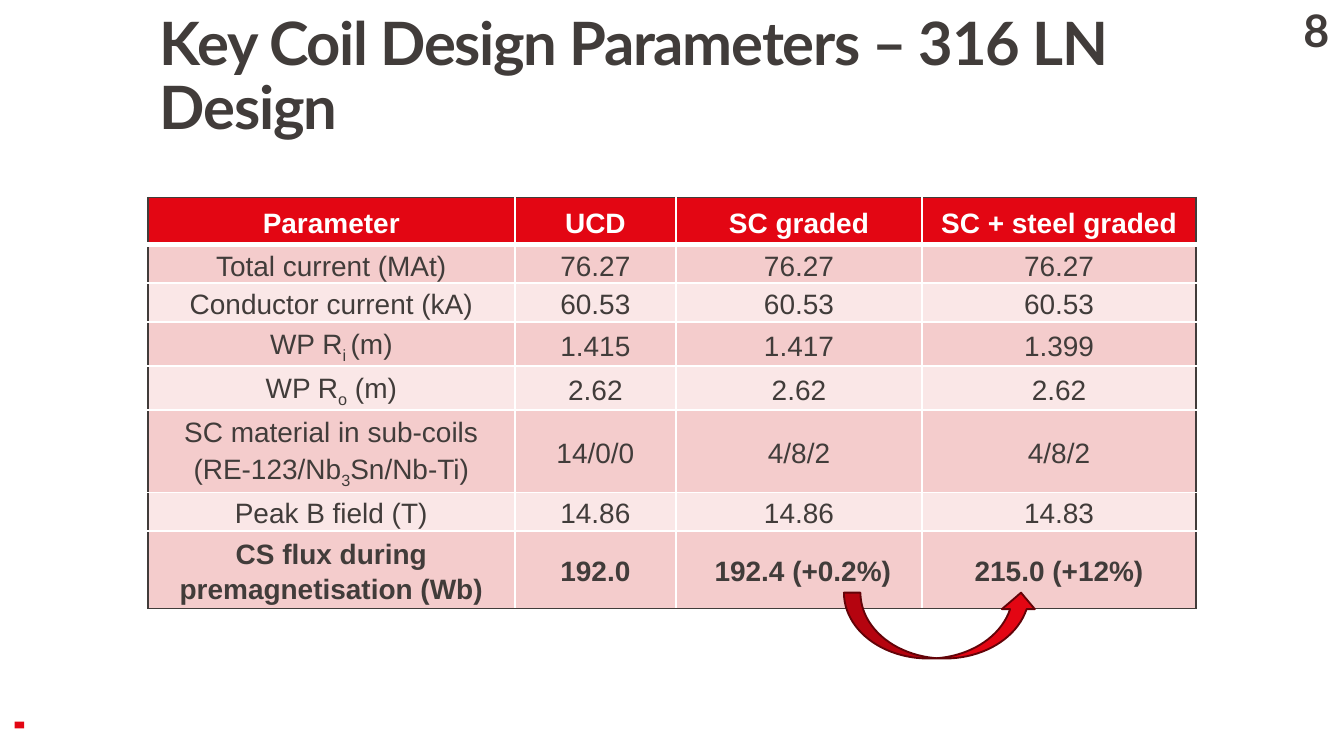
from dataclasses import dataclass

from lxml.etree import SubElement
from pptx import Presentation
from pptx.dml.color import RGBColor as RGB
from pptx.enum.shapes import MSO_SHAPE as Shape
from pptx.enum.text import MSO_ANCHOR as Anchor, MSO_AUTO_SIZE as AutoSize, PP_ALIGN as Align
from pptx.oxml.ns import qn
from pptx.util import Inches, Pt


@dataclass(frozen=True)
class Theme:
    red: str = "E30613"
    dark_red: str = "630308"
    ink: str = "413C3A"
    white: str = "FFFFFF"
    bands: tuple = ("FAE7E7", "F4CCCC")
    heading_font: str = "Lato"
    body_font: str = "Arial"
    title_size: int = 32
    number_size: int = 24
    table_size: int = 15


T = Theme()
COLS, ROWS = 100, 56.25  # slide grid of tenth-inch squares


def grid(*units):
    return [Inches(u / 10) for u in units]


def style(p, font, size, color, bold):
    p.font.name, p.font.size, p.font.bold = font, Pt(size), bold
    p.font.color.rgb = RGB.from_string(color)


prs = Presentation()
prs.slide_width, prs.slide_height = grid(COLS, ROWS)
s = prs.slides.add_slide(prs.slide_layouts[5])

# Title
title = s.shapes.title
title.left, title.top, title.width, title.height = grid(9.9, 1, 85.8, 5.8)
tf = title.text_frame
tf.word_wrap, tf.auto_size, tf.vertical_anchor = True, AutoSize.NONE, Anchor.TOP
tf.margin_left, tf.margin_top, tf.margin_right, tf.margin_bottom = grid(2, 0, 0.8, 0.5)
p = tf.paragraphs[0]
p.alignment, p.line_spacing = Align.LEFT, 0.9
style(p, T.heading_font, T.title_size, T.ink, True)
r = p.add_run()
r.text = "Key Coil Design Parameters – 316 LN Design"
r._r.get_or_add_rPr().set("spc", "-70")

# Corner marker and slide number
marker = s.shapes.add_shape(Shape.RECTANGLE, *grid(1.1, 53.7, 0.7, 0.5))
marker.shadow.inherit = False
marker.fill.solid()
marker.fill.fore_color.rgb = RGB.from_string(T.red)
marker.line.fill.background()

number = s.shapes.add_textbox(*grid(94.9, 0.2, 6.1, 3))
tf = number.text_frame
tf.word_wrap = True
tf.margin_left = tf.margin_top = tf.margin_right = tf.margin_bottom = 0
p = tf.paragraphs[0]
p.text, p.alignment = "8", Align.CENTER
style(p, T.heading_font, T.number_size, T.ink, True)

# Parameter table: underscores enclose subscripts, \v breaks a line
rows = [
    ("Parameter", "UCD", "SC graded", "SC + steel graded"),
    ("Total current (MAt)", "76.27", "76.27", "76.27"),
    ("Conductor current (kA)", "60.53", "60.53", "60.53"),
    ("WP R_i _(m)", "1.415", "1.417", "1.399"),
    ("WP R_o_ (m)", "2.62", "2.62", "2.62"),
    ("SC material in sub-coils\v(RE-123/Nb_3_Sn/Nb-Ti)", "14/0/0", "4/8/2", "4/8/2"),
    ("Peak B field (T)", "14.86", "14.86", "14.83"),
    ("CS flux during premagnetisation (Wb)", "192.0", " 192.4 (+0.2%)", "215.0 (+12%)"),
]
col_widths = grid(27.3, 12, 18.3, 20.4)
row_heights = grid(3.5, 2.7, 2.7, 2.7, 2.7, 5.7, 2.7, 4)
last_row, last_col = len(rows) - 1, len(col_widths) - 1

table = s.shapes.add_table(len(rows), len(col_widths), *grid(11, 14.7),
                           sum(col_widths), sum(row_heights)).table
table.horz_banding = False
for col, width in zip(table.columns, col_widths):
    col.width = width
for row, height in zip(table.rows, row_heights):
    row.height = height

for i, texts in enumerate(rows):
    for j, text in enumerate(texts):
        cell = table.cell(i, j)
        cell.vertical_anchor = Anchor.MIDDLE
        cell.margin_left, cell.margin_top, cell.margin_right, cell.margin_bottom = grid(0.4, 0, 0.4, 0)

        p = cell.text_frame.paragraphs[0]
        p.alignment, p.line_spacing, p.space_after = Align.CENTER, 1.15, Pt(10)
        style(p, T.body_font, T.table_size, T.ink if i else T.white, i in (0, last_row))
        p.text, *parts = text.split("_")
        for k, part in enumerate(parts):
            r = p.add_run()
            r.text = part
            if k % 2 == 0:
                r._r.get_or_add_rPr().set("baseline", "-25000")

        # Dark outer frame, white inner lines, thick rule below the header
        outer = {"lnL": j == 0, "lnR": j == last_col, "lnT": i == 0, "lnB": i == last_row}
        for side, is_outer in outer.items():
            thick = (i, side) in ((0, "lnB"), (1, "lnT"))
            ln = SubElement(cell._tc.get_or_add_tcPr(), qn(f"a:{side}"), w=str(Pt(3 if thick else 1)))
            fill = SubElement(ln, qn("a:solidFill"))
            SubElement(fill, qn("a:srgbClr"), val=T.ink if is_outer else T.white)
        cell.fill.solid()
        cell.fill.fore_color.rgb = RGB.from_string(T.bands[i % 2] if i else T.red)

# Arrow from the SC graded flux to the steel graded flux
arrow = s.shapes.add_shape(Shape.CURVED_UP_ARROW, *grid(62.8, 44.1, 14.4, 4.9))
arrow.shadow.inherit = False
arrow.fill.solid()
arrow.fill.fore_color.rgb = RGB.from_string(T.red)
arrow.line.color.rgb = RGB.from_string(T.dark_red)
arrow.line.width = Pt(1)

prs.save("out.pptx")
